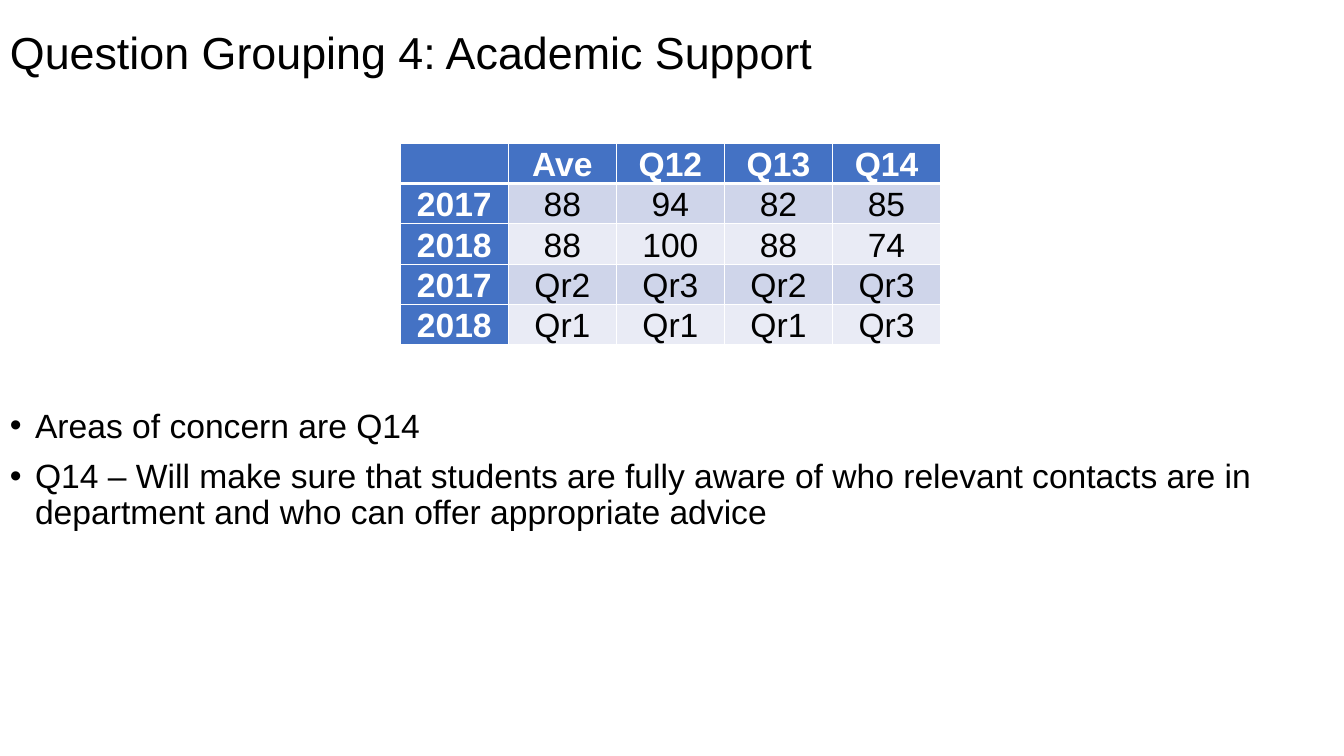
from lxml import etree
from pptx import Presentation
from pptx.dml.color import RGBColor
from pptx.enum.text import MSO_ANCHOR, PP_ALIGN
from pptx.oxml.ns import qn
from pptx.util import Inches, Pt

MIDDLE, BOTTOM = MSO_ANCHOR.MIDDLE, MSO_ANCHOR.BOTTOM
CENTER = PP_ALIGN.CENTER
W, H = 13.33, 7.5
FONT = "Arial"
BLACK, WHITE, BLUE = "000000", "FFFFFF", "4472C4"
BANDS = ["CFD5EA", "E9EBF5"]

TITLE = "Question Grouping 4: Academic Support"
SCORES = [
    ["", "Ave", "Q12", "Q13", "Q14"],
    ["2017", "88", "94", "82", "85"],
    ["2018", "88", "100", "88", "74"],
    ["2017", "Qr2", "Qr3", "Qr2", "Qr3"],
    ["2018", "Qr1", "Qr1", "Qr1", "Qr3"],
]
ACTIONS = [
    "Areas of concern are Q14",
    "Q14 – Will make sure that students are fully aware of who relevant "
    "contacts are in department and who can offer appropriate advice",
]


def color(value):
    return RGBColor.from_string(value)


def add_run(p, text, size, ink=BLACK, bold=False):
    r = p.add_run()
    r.text = text
    r.font.name, r.font.size, r.font.bold = FONT, Pt(size), bold
    r.font.color.rgb = color(ink)


def add_text_frame(s, box):
    tf = s.shapes.add_textbox(*map(Inches, box)).text_frame
    tf.word_wrap = True
    return tf


def add_title(s, box):
    tf = add_text_frame(s, box)
    tf.vertical_anchor = MIDDLE
    p = tf.paragraphs[0]
    p.line_spacing = 0.9
    add_run(p, TITLE, 32)


def add_bullets(s, box):
    tf = add_text_frame(s, box)
    for i, text in enumerate(ACTIONS):
        p = tf.add_paragraph() if i else tf.paragraphs[0]
        p.line_spacing = 0.9
        p.space_before = Pt(10 if i else 0)
        pPr = p._p.get_or_add_pPr()
        pPr.set("marL", str(Inches(0.25)))
        pPr.set("indent", str(-Inches(0.25)))
        etree.SubElement(pPr, qn("a:buFont")).set("typeface", FONT)
        etree.SubElement(pPr, qn("a:buChar")).set("char", "•")
        add_run(p, text, 24)


def set_borders(cell, widths):
    tcPr = cell._tc.get_or_add_tcPr()
    for i, (side, width) in enumerate(widths.items()):
        ln = etree.Element(qn("a:ln" + side), w=str(Pt(width)))
        fill = etree.SubElement(ln, qn("a:solidFill"))
        etree.SubElement(fill, qn("a:srgbClr")).set("val", WHITE)
        tcPr.insert(i, ln)


def add_scores(s, box):
    rows, cols = len(SCORES), len(SCORES[0])
    table = s.shapes.add_table(rows, cols, *map(Inches, box)).table
    for i, values in enumerate(SCORES):
        table.rows[i].height = Inches(box[3] / rows)
        for j, text in enumerate(values):
            heading = i == 0 or j == 0
            cell = table.cell(i, j)
            cell.margin_left = cell.margin_right = Inches(0.07)
            cell.margin_top = cell.margin_bottom = 0
            cell.vertical_anchor = BOTTOM
            cell.fill.solid()
            cell.fill.fore_color.rgb = color(BLUE if heading else BANDS[(i - 1) % 2])
            set_borders(cell, {"L": 1, "R": 1, "T": 3 if i == 1 else 1,
                               "B": 3 if i == 0 else 1})
            p = cell.text_frame.paragraphs[0]
            p.alignment = CENTER
            if text:
                add_run(p, text, 24, WHITE if heading else BLACK, heading)


def main():
    prs = Presentation()
    prs.slide_width, prs.slide_height = Inches(W), Inches(H)
    s = prs.slides.add_slide(prs.slide_layouts[6])
    add_title(s, (0, 0, W, 1.09))
    add_bullets(s, (0, 4.01, W, 3.27))
    add_scores(s, (3.97, 1.42, 5.36, 1.86))
    prs.save("out.pptx")


if __name__ == "__main__":
    main()
